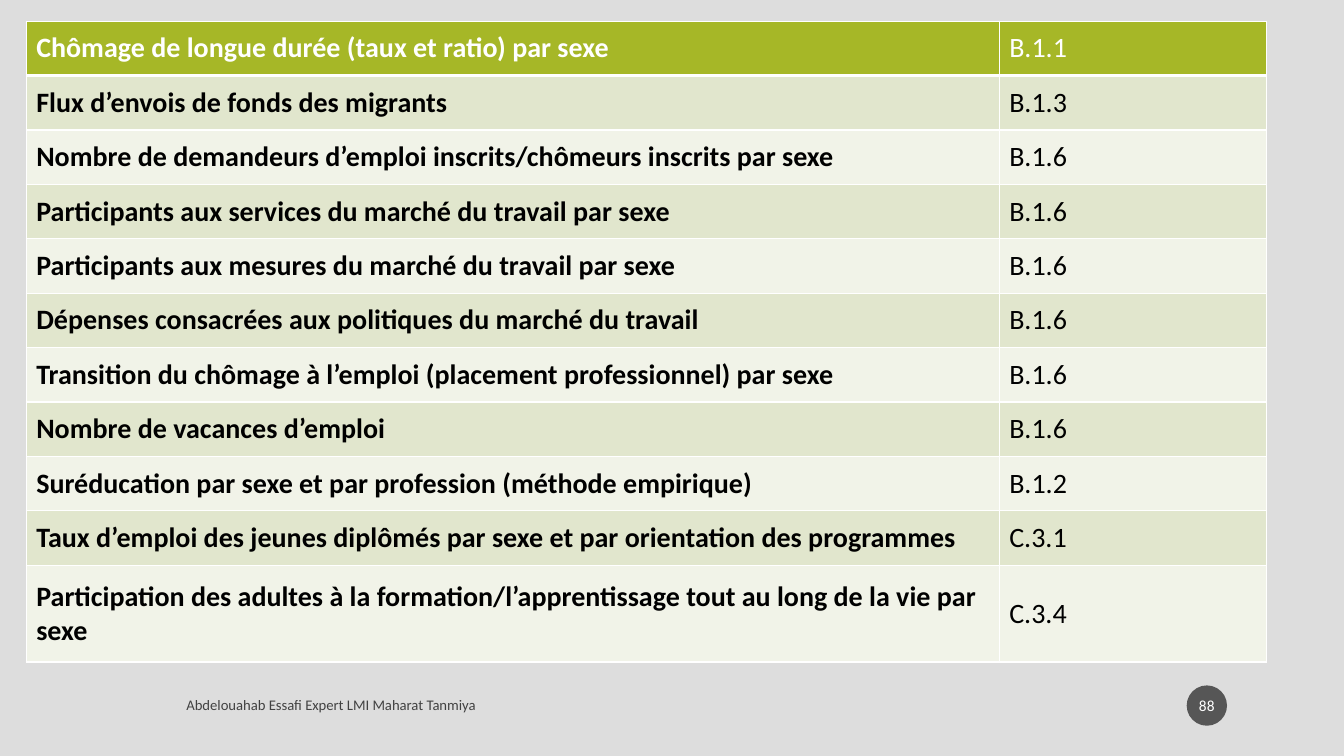
from dataclasses import dataclass

from lxml import etree
from pptx import Presentation
from pptx.dml.color import RGBColor
from pptx.enum.shapes import MSO_SHAPE
from pptx.enum.text import MSO_ANCHOR, PP_ALIGN
from pptx.oxml.ns import qn
from pptx.util import Emu, Pt

OVAL = MSO_SHAPE.OVAL
MIDDLE = MSO_ANCHOR.MIDDLE
LEFT, CENTER = PP_ALIGN.LEFT, PP_ALIGN.CENTER

PX = 9144  # 100 px to the inch
FONT = "Calibri"
BLACK = RGBColor(0x00, 0x00, 0x00)
WHITE = RGBColor(0xFF, 0xFF, 0xFF)
CHARCOAL = RGBColor(0x1D, 0x1D, 0x1D)
BACKGROUND = RGBColor(0xDD, 0xDD, 0xDD)
HEADER_GREEN = RGBColor(0xA6, 0xB7, 0x27)
BAND_DARK = RGBColor(0xE1, 0xE6, 0xCD)
BAND_LIGHT = RGBColor(0xF1, 0xF3, 0xE8)

COLUMN_WIDTHS = (965, 265)
ROW_HEIGHT, LAST_ROW_HEIGHT = 54, 96
THIN, THICK = 1, 3


@dataclass(frozen=True)
class Indicator:
    label: str
    code: str


INDICATORS = [
    Indicator("Chômage de longue durée (taux et ratio) par sexe", "B.1.1"),
    Indicator("Flux d’envois de fonds des migrants", "B.1.3"),
    Indicator("Nombre de demandeurs d’emploi inscrits/chômeurs inscrits par sexe", "B.1.6"),
    Indicator("Participants aux services du marché du travail par sexe", "B.1.6"),
    Indicator("Participants aux mesures du marché du travail par sexe", "B.1.6"),
    Indicator("Dépenses consacrées aux politiques du marché du travail", "B.1.6"),
    Indicator("Transition du chômage à l’emploi (placement professionnel) par sexe", "B.1.6"),
    Indicator("Nombre de vacances d’emploi", "B.1.6"),
    Indicator("Suréducation par sexe et par profession (méthode empirique)", "B.1.2"),
    Indicator("Taux d’emploi des jeunes diplômés par sexe et par orientation des programmes", "C.3.1"),
    Indicator("Participation des adultes à la formation/l’apprentissage tout au long de la vie par sexe", "C.3.4"),
]


def px(length: int) -> Emu:
    return Emu(length * PX)


def write(frame, text: str, size: float, color: RGBColor, bold: bool = False, align=LEFT) -> None:
    frame.text = text
    frame.word_wrap = True
    paragraph = frame.paragraphs[0]
    paragraph.alignment = align
    font = paragraph.runs[0].font
    font.name, font.size, font.bold = FONT, Pt(size), bold
    font.color.rgb = color


def set_opacity(parent, percent: int) -> None:
    color = parent.find(".//" + qn("a:srgbClr"))
    etree.SubElement(color, qn("a:alpha"), val=str(percent * 1000))


def set_borders(cell, top: int, bottom: int) -> None:
    properties = cell._tc.get_or_add_tcPr()
    for side, width in (("L", THIN), ("R", THIN), ("T", top), ("B", bottom)):
        line = etree.SubElement(properties, qn(f"a:ln{side}"), w=str(Pt(width)))
        fill = etree.SubElement(line, qn("a:solidFill"))
        etree.SubElement(fill, qn("a:srgbClr"), val=str(WHITE))


def add_indicator_table(slide) -> None:
    last = len(INDICATORS) - 1
    height = ROW_HEIGHT * last + LAST_ROW_HEIGHT
    table = slide.shapes.add_table(
        len(INDICATORS), len(COLUMN_WIDTHS),
        px(26), px(21), px(sum(COLUMN_WIDTHS)), px(height),
    ).table
    for column, width in zip(table.columns, COLUMN_WIDTHS):
        column.width = px(width)
    for row, indicator in enumerate(INDICATORS):
        table.rows[row].height = px(LAST_ROW_HEIGHT if row == last else ROW_HEIGHT)
        is_header = row == 0
        band = HEADER_GREEN if is_header else (BAND_LIGHT, BAND_DARK)[row % 2]
        for column, text in enumerate((indicator.label, indicator.code)):
            cell = table.cell(row, column)
            write(cell.text_frame, text, 20, WHITE if is_header else BLACK, bold=column == 0)
            cell.vertical_anchor = MIDDLE
            set_borders(cell, THICK if row == 1 else THIN, THICK if is_header else THIN)
            cell.fill.solid()
            cell.fill.fore_color.rgb = band


def add_footer(slide) -> None:
    footer = slide.shapes.add_textbox(px(175), px(682), px(645), px(35))
    write(footer.text_frame, "Abdelouahab Essafi Expert LMI Maharat Tanmiya", 10.5, BLACK)
    footer.text_frame.vertical_anchor = MIDDLE
    set_opacity(footer._element.txBody, 70)


def add_page_number(slide) -> None:
    badge = slide.shapes.add_shape(OVAL, px(1177), px(680), px(40), px(40))
    badge.shadow.inherit = False
    badge.fill.solid()
    badge.fill.fore_color.rgb = CHARCOAL
    set_opacity(badge._element.spPr, 70)
    badge.line.fill.background()
    frame = badge.text_frame
    write(frame, "88", 11, WHITE, align=CENTER)
    frame.vertical_anchor = MIDDLE
    frame.margin_left = frame.margin_right = px(2)
    frame.margin_top = frame.margin_bottom = px(5)


def main() -> None:
    deck = Presentation()
    deck.slide_width, deck.slide_height = px(1333), px(750)
    slide = deck.slides.add_slide(deck.slide_layouts[6])
    slide.background.fill.solid()
    slide.background.fill.fore_color.rgb = BACKGROUND

    # Footer line and page badge
    add_footer(slide)
    add_page_number(slide)

    # Indicators with their section codes
    add_indicator_table(slide)

    deck.save("out.pptx")


if __name__ == "__main__":
    main()
